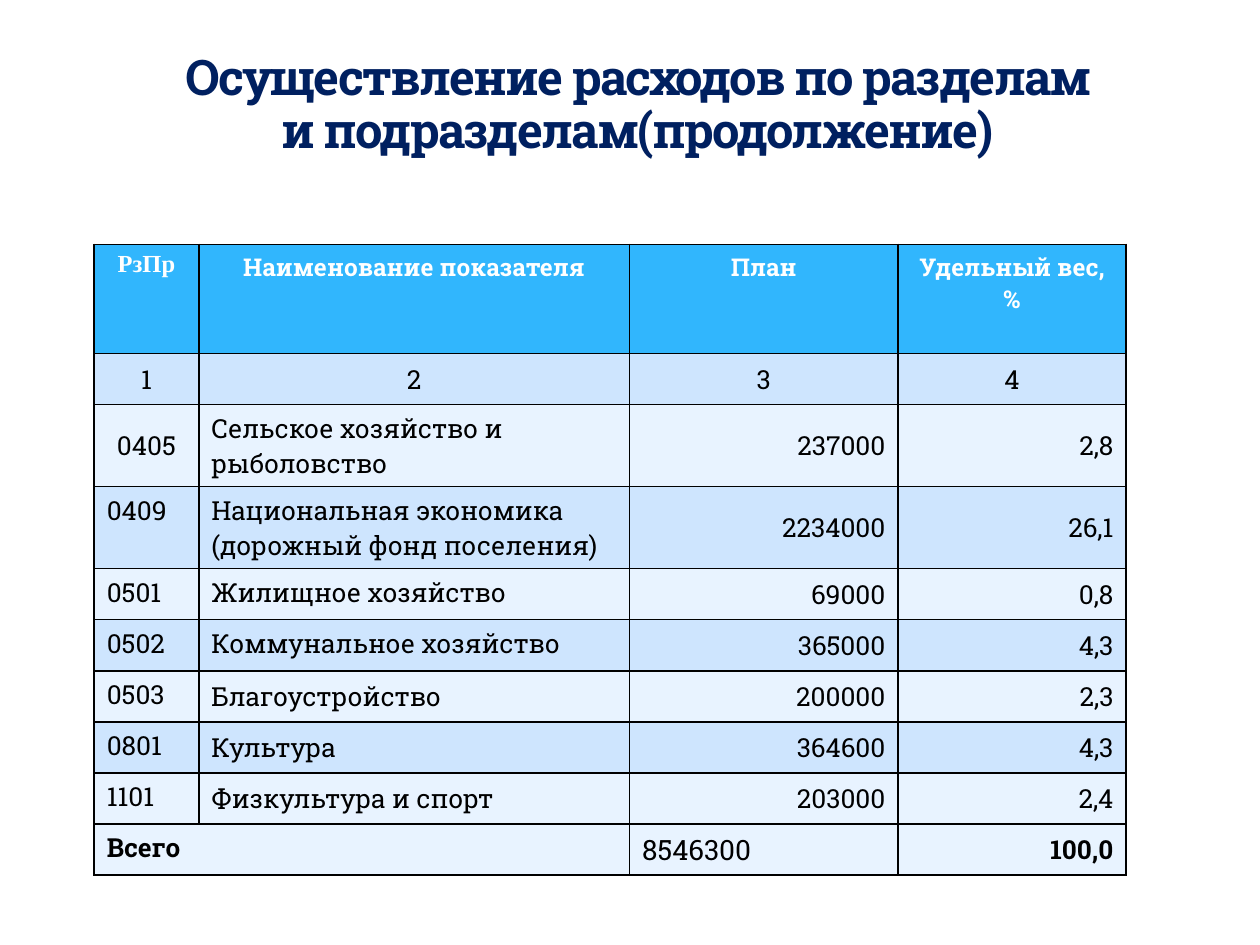
from dataclasses import dataclass

from lxml.etree import SubElement
from pptx import Presentation
from pptx.dml.color import RGBColor
from pptx.enum.text import MSO_ANCHOR, PP_ALIGN
from pptx.oxml.ns import qn
from pptx.util import Pt

LEFT, CENTER, RIGHT = PP_ALIGN.LEFT, PP_ALIGN.CENTER, PP_ALIGN.RIGHT
TOP, MIDDLE, BOTTOM = MSO_ANCHOR.TOP, MSO_ANCHOR.MIDDLE, MSO_ANCHOR.BOTTOM


@dataclass(frozen=True)
class Theme:
    font: str = "Roboto Slab"
    code_font: str = "Times New Roman"
    title: str = "002060"
    header: str = "31B6FD"
    header_text: str = "FFFFFF"
    text: str = "000000"
    border: str = "000000"
    bands: tuple = ("E8F3FF", "CEE5FE")
    title_size: int = 28
    header_size: int = 14
    body_size: int = 15
    sum_size: int = 16


def write(tf, text, *, font, size, color, bold=False, align=LEFT,
          anchor=TOP, tracking=0, line_spacing=None):
    tf.word_wrap = True
    tf.vertical_anchor = anchor
    p = tf.paragraphs[0]
    p.alignment = align
    if line_spacing:
        p.line_spacing = line_spacing
    r = p.add_run()
    r.text = text
    r.font.name = font
    r.font.size = Pt(size)
    r.font.bold = bold
    r.font.color.rgb = RGBColor.from_string(color)
    if tracking:
        r.font._element.set("spc", str(tracking * 100))


class SlideBuilder:
    def __init__(self, s, theme):
        self.s = s
        self.theme = theme

    def title(self, text, left, top, width, height):
        t = self.theme
        tf = self.s.shapes.add_textbox(
            Pt(left), Pt(top), Pt(width), Pt(height)).text_frame
        tf.margin_top = tf.margin_bottom = 0
        write(tf, text, font=t.font, size=t.title_size, color=t.title, bold=True,
              align=CENTER, anchor=BOTTOM, tracking=-1, line_spacing=0.9)

    def table(self, left, top, widths, heights):
        table = self.s.shapes.add_table(
            len(heights), len(widths), Pt(left), Pt(top),
            Pt(sum(widths)), Pt(sum(heights))).table
        for column, width in zip(table.columns, widths):
            column.width = Pt(width)
        for row, height in zip(table.rows, heights):
            row.height = Pt(height)
        return table

    def cell(self, cell, text, fill, anchor=TOP, **fmt):
        t = self.theme
        self.borders(cell)
        cell.fill.solid()
        cell.fill.fore_color.rgb = RGBColor.from_string(fill)
        if text:
            style = dict(font=t.font, size=t.body_size, color=t.text) | fmt
            write(cell.text_frame, text, **style)
        cell.vertical_anchor = anchor

    def borders(self, cell):
        tc_pr = cell._tc.get_or_add_tcPr()
        for side in ("lnL", "lnR", "lnT", "lnB"):
            ln = SubElement(tc_pr, qn(f"a:{side}"), w=str(Pt(1)))
            fill = SubElement(ln, qn("a:solidFill"))
            SubElement(fill, qn("a:srgbClr"), val=self.theme.border)


HEADERS = ("РзПр", "Наименование показателя", "План", "Удельный вес, %")
# code, code alignment and anchor, name, name anchor, plan, share
EXPENSES = (
    ("0405", CENTER, MIDDLE, "Сельское хозяйство и рыболовство", MIDDLE, "237000", "2,8"),
    ("0409", LEFT, TOP, "Национальная экономика (дорожный фонд поселения)", TOP,
     "2234000", "26,1"),
    ("0501", LEFT, TOP, "Жилищное хозяйство", TOP, "69000", "0,8"),
    ("0502", LEFT, TOP, "Коммунальное хозяйство", TOP, "365000", "4,3"),
    ("0503", LEFT, TOP, "Благоустройство", MIDDLE, "200000", "2,3"),
    ("0801", LEFT, TOP, "Культура", MIDDLE, "364600", "4,3"),
    ("1101", LEFT, TOP, "Физкультура и спорт", MIDDLE, "203000", "2,4"),
)


def fill_table(b, table):
    t = b.theme
    for c, text in enumerate(HEADERS):
        b.cell(table.cell(0, c), text, t.header, align=CENTER, bold=True,
               font=t.font if c else t.code_font,
               size=t.header_size, color=t.header_text)
        b.cell(table.cell(1, c), str(c + 1), t.bands[1], MIDDLE, align=CENTER)

    for i, row in enumerate(EXPENSES, start=2):
        code, code_align, code_anchor, name, name_anchor, plan, share = row
        band = t.bands[i % 2]
        b.cell(table.cell(i, 0), code, band, code_anchor, align=code_align)
        b.cell(table.cell(i, 1), name, band, name_anchor)
        for c, value in ((2, plan), (3, share)):
            b.cell(table.cell(i, c), value, band, MIDDLE, align=RIGHT)

    last = len(EXPENSES) + 2
    band = t.bands[last % 2 ^ 1]
    table.cell(last, 0).merge(table.cell(last, 1))
    b.cell(table.cell(last, 0), "Всего", band, bold=True)
    b.cell(table.cell(last, 1), "", band)
    b.cell(table.cell(last, 2), "8546300", band, MIDDLE, size=t.sum_size)
    b.cell(table.cell(last, 3), "100,0", band, MIDDLE, align=RIGHT, bold=True)


def main():
    prs = Presentation()
    prs.slide_width, prs.slide_height = Pt(720), Pt(540)
    b = SlideBuilder(prs.slides.add_slide(prs.slide_layouts[6]), Theme())
    table = b.table(53.8, 139.6, (59.8, 246.2, 153.4, 130.3),
                    [62.4] + [29.2] * (len(EXPENSES) + 2))
    fill_table(b, table)
    b.title("Осуществление расходов по разделам и подразделам(продолжение)",
            87.8, 54.7, 553, 36)
    prs.save("out.pptx")


if __name__ == "__main__":
    main()
